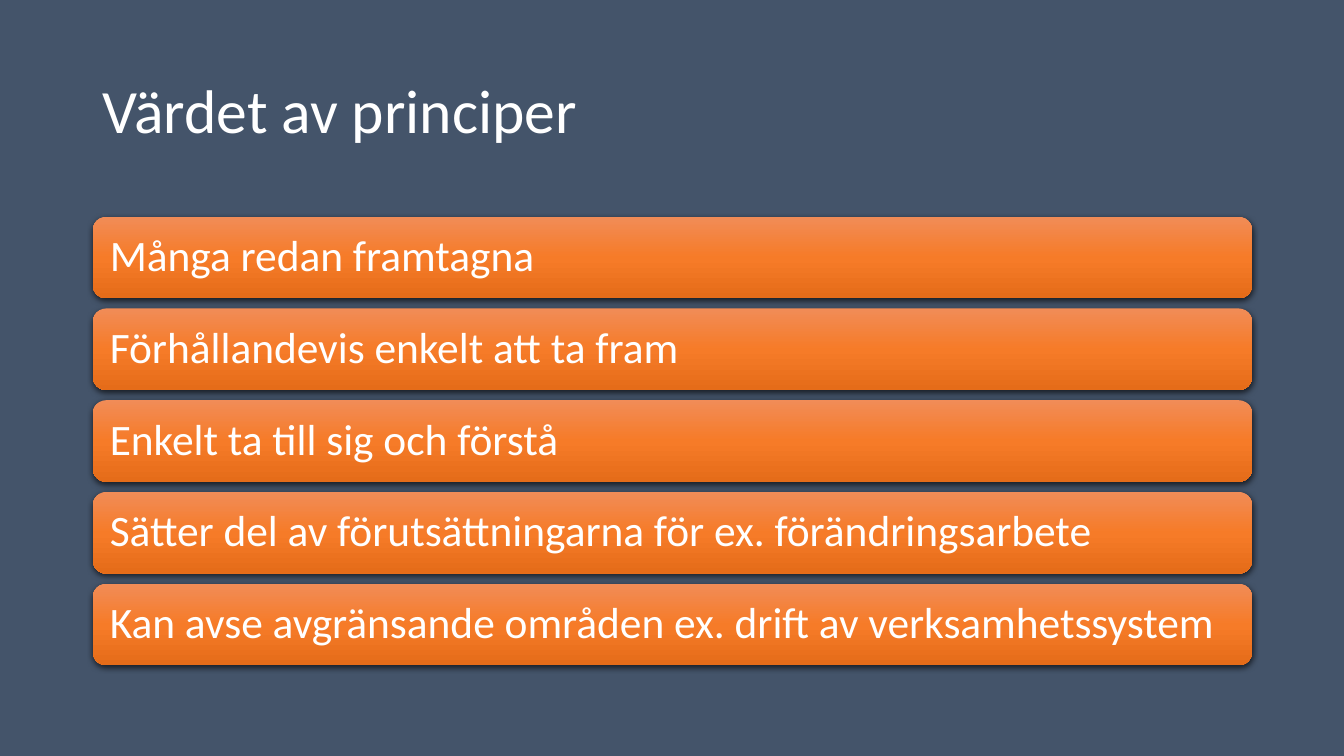
import copy

import pptx
import pptx.dml.color
import pptx.enum.shapes
import pptx.enum.text
import pptx.oxml
import pptx.oxml.ns
import pptx.util

Inches = pptx.util.Inches
RGBColor = pptx.dml.color.RGBColor

SLATE = RGBColor(0x44, 0x54, 0x6A)
WHITE = RGBColor(0xFF, 0xFF, 0xFF)
BAR_GRADIENT = (
    RGBColor(0xF1, 0x8C, 0x57),
    RGBColor(0xF6, 0x7B, 0x28),
    RGBColor(0xE5, 0x6C, 0x19),
)
FONT = "Calibri"

TITLE = "Värdet av principer"
PRINCIPLES = (
    "Många redan framtagna",
    "Förhållandevis enkelt att ta fram",
    "Enkelt ta till sig och förstå",
    "Sätter del av förutsättningarna för ex. förändringsarbete",
    "Kan avse avgränsande områden ex. drift av verksamhetssystem",
)
BAR_HEIGHT = 0.81
BAR_GAP = 0.1

SHADOW_XML = (
    f'<a:outerShdw {pptx.oxml.ns.nsdecls("a")} blurRad="57150" dist="19050" '
    'dir="5400000" algn="ctr" rotWithShape="0">'
    '<a:srgbClr val="000000"><a:alpha val="63000"/></a:srgbClr></a:outerShdw>'
)


def write_line(shape, text, size):
    """Put one white, left-aligned line in the vertical middle of the shape."""
    frame = shape.text_frame
    frame.word_wrap = True
    frame.vertical_anchor = pptx.enum.text.MSO_ANCHOR.MIDDLE
    frame.text = text
    para = frame.paragraphs[0]
    para.alignment = pptx.enum.text.PP_ALIGN.LEFT
    para.line_spacing = 0.9
    font = para.runs[0].font
    font.name = FONT
    font.size = pptx.util.Pt(size)
    font.color.rgb = WHITE


def fill_bar(bar):
    """Give the bar its three-stop vertical gradient and soft shadow."""
    bar.fill.gradient()
    bar.fill.gradient_angle = 270
    stop_list = bar._element.spPr.find(".//" + pptx.oxml.ns.qn("a:gsLst"))
    stop_list.insert(1, copy.deepcopy(stop_list[0]))
    for index, (stop, color) in enumerate(zip(bar.fill.gradient_stops, BAR_GRADIENT)):
        stop.position = index / 2
        stop.color.rgb = color
    bar.line.fill.background()
    bar.shadow.inherit = False
    effects = bar._element.spPr.find(pptx.oxml.ns.qn("a:effectLst"))
    effects.append(pptx.oxml.parse_xml(SHADOW_XML))


def add_title(page, left, top, width, height):
    box = page.shapes.add_textbox(
        Inches(left), Inches(top), Inches(width), Inches(height)
    )
    write_line(box, TITLE, 44)


def add_principles(page, left, top, width):
    for index, principle in enumerate(PRINCIPLES):
        bar = page.shapes.add_shape(
            pptx.enum.shapes.MSO_SHAPE.ROUNDED_RECTANGLE,
            Inches(left),
            Inches(top + index * (BAR_HEIGHT + BAR_GAP)),
            Inches(width),
            Inches(BAR_HEIGHT),
        )
        fill_bar(bar)
        write_line(bar, principle, 31)
        bar.text_frame.margin_left = bar.text_frame.margin_right = Inches(0.13)


def main():
    deck = pptx.Presentation()
    deck.slide_width = Inches(13.33)
    deck.slide_height = Inches(7.5)
    page = deck.slides.add_slide(deck.slide_layouts[6])
    page.background.fill.solid()
    page.background.fill.fore_color.rgb = SLATE
    add_title(page, 0.92, 0.4, 11.5, 1.45)
    add_principles(page, 0.92, 2.15, 11.5)
    deck.save("out.pptx")


if __name__ == "__main__":
    main()
